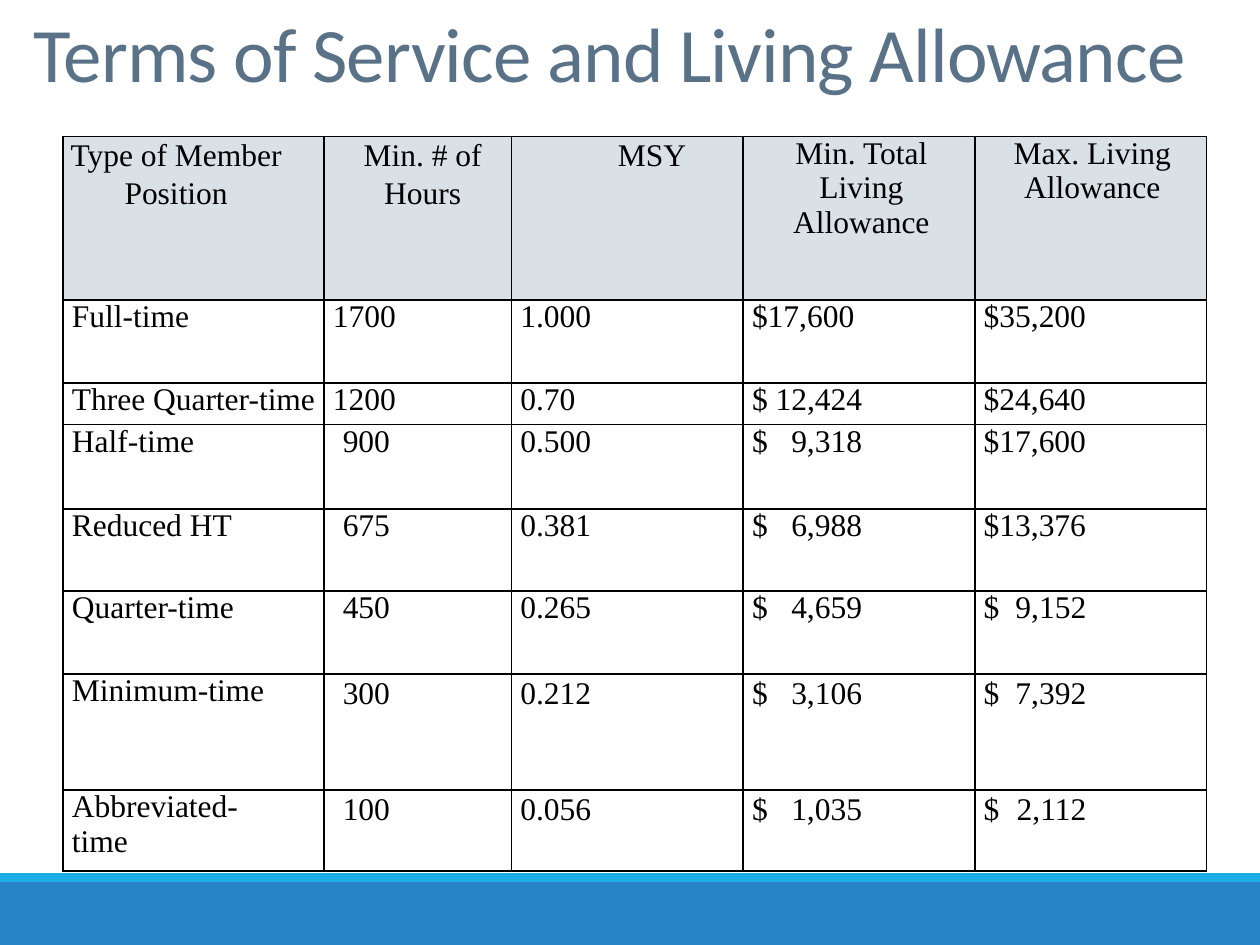
from lxml.etree import SubElement
from pptx import Presentation
from pptx.dml.color import RGBColor
from pptx.enum.shapes import MSO_SHAPE
from pptx.enum.text import MSO_ANCHOR, MSO_AUTO_SIZE, PP_ALIGN
from pptx.oxml.ns import qn
from pptx.util import Cm, Pt

BLACK = RGBColor(0x00, 0x00, 0x00)
SLATE = RGBColor(0x59, 0x72, 0x87)
PALE_SLATE = RGBColor(0xD9, 0xE0, 0xE6)
BLUE = RGBColor(0x26, 0x83, 0xC6)
CYAN = RGBColor(0x1C, 0xAD, 0xE4)

COLUMN_WIDTHS = (5.26, 3.78, 4.67, 4.67, 4.67)
ROW_HEIGHTS = (3.3, 1.67, 0.84, 1.7, 1.65, 1.68, 2.34, 1.63)
HEADER_MARGINS = ((0, 0.7), (0.2, 0), (1, 0), (0.58, 0.48), (0.6, 0.53))
AMOUNT_TABS = {3: 2.22, 4: 2.07}
TERMS = (
    ("Type of Member Position", "Min. # of Hours", "MSY",
     "Min. Total Living Allowance", "Max. Living Allowance"),
    ("Full-time", "1700", "1.000", "$17,600", "$35,200"),
    ("Three Quarter-time", "1200", "0.70", "$\t12,424", "$24,640"),
    ("Half-time", "900", "0.500", "$\t9,318", "$17,600"),
    ("Reduced HT", "675", "0.381", "$\t6,988", "$13,376"),
    ("Quarter-time", "450", "0.265", "$\t4,659", "$\t9,152"),
    ("Minimum-time", "300", "0.212", "$\t3,106", "$\t7,392"),
    ("Abbreviated-time", "100", "0.056", "$\t1,035", "$\t2,112"),
)


class TermsSlide:
    """Style and drawing methods for the terms of service slide."""

    title_font = "Calibri"
    table_font = "Times New Roman"

    def __init__(self, deck):
        self.slide = deck.slides.add_slide(deck.slide_layouts[5])

    def band(self, top, height, color):
        band = self.slide.shapes.add_shape(
            MSO_SHAPE.RECTANGLE, Cm(0), Cm(top), Cm(25.4), Cm(height))
        band.shadow.inherit = False
        band.fill.solid()
        band.fill.fore_color.rgb = color
        band.line.fill.background()

    def title(self, wording):
        heading = self.slide.shapes.title
        heading.left, heading.top = Cm(0.43), Cm(0)
        heading.width, heading.height = Cm(24.13), Cm(2.11)
        frame = heading.text_frame
        frame.text = wording
        frame.word_wrap = True
        frame.auto_size = MSO_AUTO_SIZE.NONE
        frame.vertical_anchor = MSO_ANCHOR.BOTTOM
        paragraph = frame.paragraphs[0]
        paragraph.alignment = PP_ALIGN.LEFT
        paragraph.line_spacing = 0.85
        self.font(paragraph, self.title_font, 44, SLATE)
        paragraph.runs[0].font._element.set("spc", "-50")

    def font(self, paragraph, name, size, color):
        paragraph.font.name = name
        paragraph.font.size = Pt(size)
        paragraph.font.color.rgb = color

    def table(self, rows):
        grid = self.slide.shapes.add_table(
            len(rows), len(COLUMN_WIDTHS), Cm(1.27), Cm(2.75),
            Cm(sum(COLUMN_WIDTHS)), Cm(sum(ROW_HEIGHTS))).table
        grid.first_row = grid.horz_banding = False
        for column, width in zip(grid.columns, COLUMN_WIDTHS):
            column.width = Cm(width)
        for row, height in zip(grid.rows, ROW_HEIGHTS):
            row.height = Cm(height)
        for r, entries in enumerate(rows):
            for c, wording in enumerate(entries):
                self.entry(grid.cell(r, c), r, c, wording)

    def entry(self, cell, r, c, wording):
        header = r == 0
        if header:
            left, right = HEADER_MARGINS[c]
            loose = c < 3
        else:
            left = 0.38 if c == 1 and r > 2 else 0.18
            right = 0.7 if wording == "Abbreviated-time" else 0
            loose = c > 0 and r > 5
        cell.margin_left, cell.margin_right = Cm(left), Cm(right)
        cell.margin_top = cell.margin_bottom = Cm(0)
        cell.text = wording
        paragraph = cell.text_frame.paragraphs[0]
        paragraph.alignment = PP_ALIGN.CENTER if header else PP_ALIGN.LEFT
        paragraph.line_spacing = 1.07 if loose else 0.99
        paragraph.space_before = Pt(0.6)
        self.font(paragraph, self.table_font, 18, BLACK)
        if "\t" in wording:
            self.right_tab(paragraph, AMOUNT_TABS[c])
        self.borders(cell)
        if header:
            cell.fill.solid()
            cell.fill.fore_color.rgb = PALE_SLATE
        else:
            cell.fill.background()

    def right_tab(self, paragraph, position):
        properties = paragraph._p.get_or_add_pPr()
        stops = SubElement(properties, qn("a:tabLst"))
        SubElement(stops, qn("a:tab"), pos=str(Cm(position)), algn="r")
        properties.find(qn("a:defRPr")).addprevious(stops)

    def borders(self, cell):
        properties = cell._tc.get_or_add_tcPr()
        for side in ("a:lnL", "a:lnR", "a:lnT", "a:lnB"):
            edge = SubElement(properties, qn(side), w=str(Pt(1)))
            paint = SubElement(edge, qn("a:solidFill"))
            SubElement(paint, qn("a:srgbClr"), val=str(BLACK))


def main():
    deck = Presentation()
    deck.slide_width, deck.slide_height = Cm(25.4), Cm(19.05)
    terms = TermsSlide(deck)
    terms.band(17.78, 1.27, BLUE)
    terms.band(17.6, 0.18, CYAN)
    terms.title("Terms of Service and Living Allowance")
    terms.table(TERMS)
    deck.save("out.pptx")


if __name__ == "__main__":
    main()
